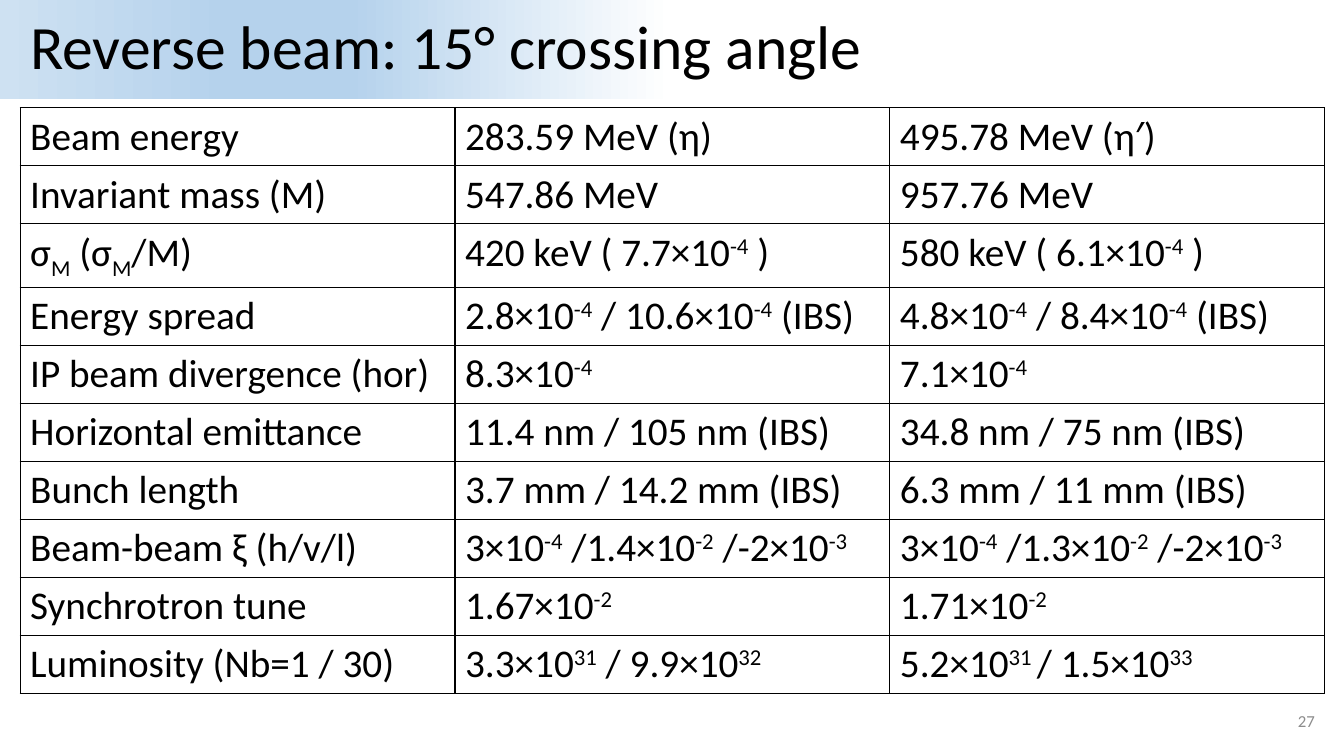
import pptx
import pptx.util
import pptx.oxml
import pptx.oxml.ns
import pptx.dml.color
import pptx.enum.shapes
import pptx.enum.text
from lxml import etree

Inches = pptx.util.Inches
Pt = pptx.util.Pt
RGBColor = pptx.dml.color.RGBColor
ALIGN = pptx.enum.text.PP_ALIGN
MIDDLE = pptx.enum.text.MSO_ANCHOR.MIDDLE

BLACK = RGBColor(0x00, 0x00, 0x00)
GRAY = RGBColor(0x8C, 0x8C, 0x8C)
WHITE = RGBColor(0xFF, 0xFF, 0xFF)
BLUE = RGBColor(0xB5, 0xD2, 0xEC)
PALE = RGBColor(0xCE, 0xE1, 0xF2)

FADE = [(50, WHITE), (74, BLUE), (83, BLUE), (100, PALE)]
SHIFT = {"^": "30000", "_": "-25000"}

# Bars split a cell into runs; a run led by ^ is raised, by _ is lowered.
ROWS = [
    ("Beam energy", "283.59 MeV (η)", "495.78 MeV (η′)"),
    ("Invariant mass (M)", "547.86 MeV", "957.76 MeV"),
    ("σ|_M| (σ|_M|/M)", "420 keV ( 7.7×10|^-4| )", "580 keV ( 6.1×10|^-4| )"),
    ("Energy spread", "2.8×10|^-4| / 10.6×10|^-4| (IBS)",
     "4.8×10|^-4| / 8.4×10|^-4| (IBS)"),
    ("IP beam divergence (hor)", "8.3×10|^-4", "7.1×10|^-4"),
    ("Horizontal emittance", "11.4 nm / 105 nm (IBS)", "34.8 nm / 75 nm (IBS)"),
    ("Bunch length", "3.7 mm / 14.2 mm (IBS)", "6.3 mm / 11 mm (IBS)"),
    ("Beam-beam ξ (h/v/l)", "3×10|^-4| /1.4×10|^-2| /-2×10|^-3",
     "3×10|^-4| /1.3×10|^-2| /-2×10|^-3"),
    ("Synchrotron tune", "1.67×10|^-2", "1.71×10|^-2"),
    ("Luminosity (Nb=1 / 30)", "3.3×10|^31| / 9.9×10|^32",
     "5.2×10|^31 |/ 1.5×10|^33"),
]


def write(frame, text, size=28, color=BLACK, align=ALIGN.LEFT, space=None):
    """Fill a text frame with one paragraph of marked-up runs."""
    para = frame.paragraphs[0]
    para.alignment = align
    para.line_spacing = space
    for part in text.split("|"):
        shift = SHIFT.get(part[0])
        run = para.add_run()
        run.text = part[1:] if shift else part
        run.font.name = "Calibri"
        run.font.size = Pt(size)
        run.font.color.rgb = color
        if shift:
            run.font._element.set("baseline", shift)


def fade(shape, stops):
    """Give a shape a gradient that runs from right to left."""
    shape.fill.gradient()
    shape.fill.gradient_angle = 180
    grad = shape._element.spPr.find(pptx.oxml.ns.qn("a:gradFill"))
    items = grad.find(pptx.oxml.ns.qn("a:gsLst"))
    for old in list(items):
        items.remove(old)
    for place, color in stops:
        stop = etree.SubElement(items, pptx.oxml.ns.qn("a:gs"), pos=str(place * 1000))
        etree.SubElement(stop, pptx.oxml.ns.qn("a:srgbClr"), val=str(color))


def add_title(slide, text):
    bar = slide.shapes.add_shape(
        pptx.enum.shapes.MSO_SHAPE.RECTANGLE, 0, 0, Inches(13.33), Inches(0.98))
    bar.shadow.inherit = False
    bar.line.fill.background()
    fade(bar, FADE)
    frame = bar.text_frame
    frame.word_wrap = True
    frame.margin_left = Inches(0.3)
    frame.vertical_anchor = MIDDLE
    write(frame, text, size=44, space=0.9)


def edge(cell):
    """Draw a thin black border on all four sides of a cell."""
    props = cell._tc.get_or_add_tcPr()
    for side in ("lnL", "lnR", "lnT", "lnB"):
        line = etree.SubElement(props, pptx.oxml.ns.qn("a:" + side), w=str(Pt(1)))
        fill = etree.SubElement(line, pptx.oxml.ns.qn("a:solidFill"))
        etree.SubElement(fill, pptx.oxml.ns.qn("a:srgbClr"), val=str(BLACK))


def add_grid(slide, rows):
    table = slide.shapes.add_table(
        len(rows), len(rows[0]), Inches(0.2), Inches(1.07),
        Inches(12.94), Inches(4.1)).table
    table.first_row = False
    table.horz_banding = False
    for r, row in enumerate(rows):
        for c, text in enumerate(row):
            cell = table.cell(r, c)
            edge(cell)
            cell.fill.background()
            write(cell.text_frame, text)


def add_page(slide, text):
    box = slide.shapes.add_textbox(
        Inches(10.14), Inches(6.95), Inches(3), Inches(0.4))
    box.text_frame.word_wrap = True
    box.text_frame.vertical_anchor = MIDDLE
    write(box.text_frame, text, size=12, color=GRAY, align=ALIGN.RIGHT)


def main():
    deck = pptx.Presentation()
    deck.slide_width = Inches(13.33)
    deck.slide_height = Inches(7.5)
    slide = deck.slides.add_slide(deck.slide_layouts[6])
    add_title(slide, "Reverse beam: 15° crossing angle")
    add_grid(slide, ROWS)
    add_page(slide, "27")
    deck.save("out.pptx")


if __name__ == "__main__":
    main()
